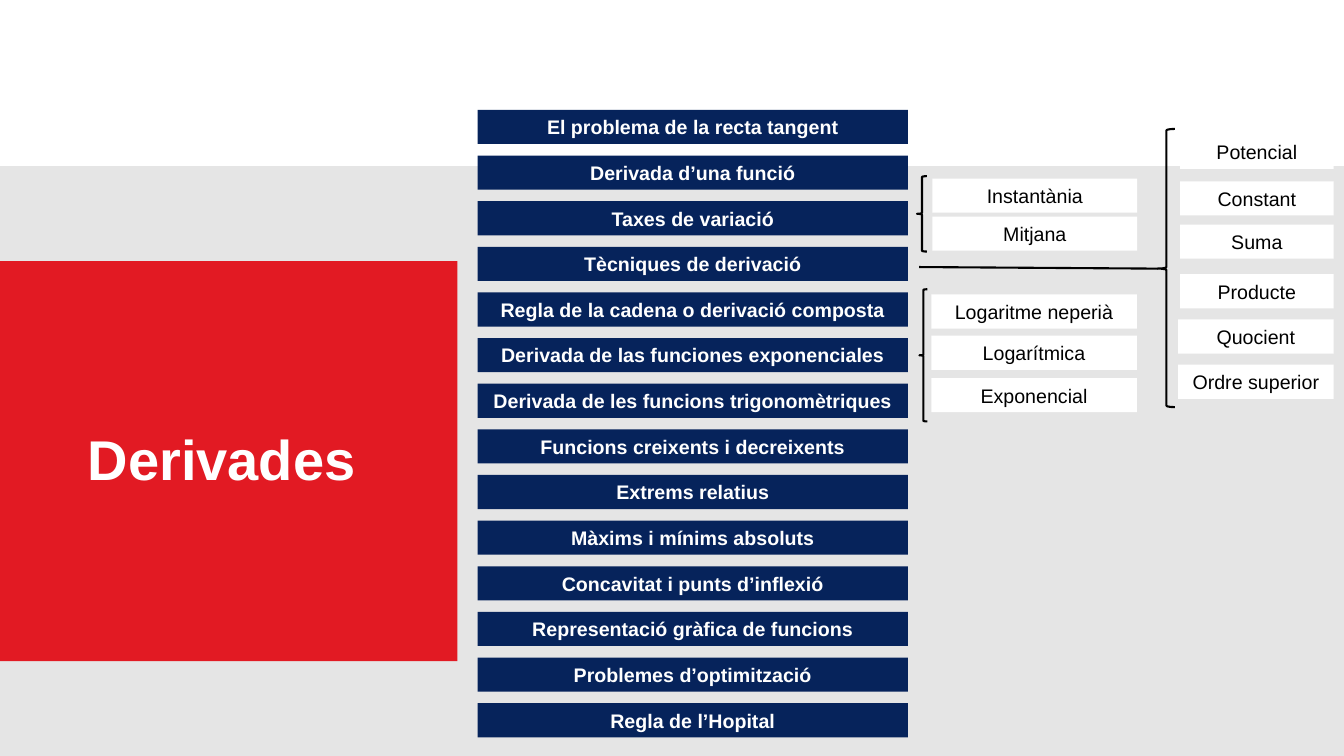
from pptx import Presentation
from pptx.dml.color import RGBColor
from pptx.enum.shapes import MSO_CONNECTOR, MSO_SHAPE
from pptx.enum.text import MSO_ANCHOR, MSO_AUTO_SIZE, PP_ALIGN
from pptx.oxml.ns import qn
from pptx.util import Cm, Pt
from lxml import etree

RECTANGLE = MSO_SHAPE.RECTANGLE
LEFT_BRACE = MSO_SHAPE.LEFT_BRACE
STRAIGHT = MSO_CONNECTOR.STRAIGHT
MIDDLE = MSO_ANCHOR.MIDDLE
GROW = MSO_AUTO_SIZE.SHAPE_TO_FIT_TEXT
LEFT, CENTER = PP_ALIGN.LEFT, PP_ALIGN.CENTER

COLORS = {
    "grey": "E5E5E5",
    "red": "E21A23",
    "navy": "06235B",
    "white": "FFFFFF",
    "black": "000000",
}
FONT = "Arial"
WIDTH, HEIGHT = 33.87, 19.05
BAR_HEIGHT = 0.86

TOPICS = [
    "El problema de la recta tangent",
    "Derivada d’una funció",
    "Taxes de variació",
    "Tècniques de derivació",
    "Regla de la cadena o derivació composta",
    "Derivada de las funciones exponenciales",
    "Derivada de les funcions trigonomètriques",
    "Funcions creixents i decreixents",
    "Extrems relatius",
    "Màxims i mínims absoluts",
    "Concavitat i punts d’inflexió",
    "Representació gràfica de funcions",
    "Problemes d’optimització",
    "Regla de l’Hopital",
]
# Subtopics with their tops in cm
RATES = [("Instantània", 4.5), ("Mitjana", 5.46)]
EXPONENTIALS = [("Logaritme neperià", 7.42), ("Logarítmica", 8.46), ("Exponencial", 9.53)]
BASIC_RULES = [("Potencial", 3.4), ("Constant", 4.57), ("Suma", 5.66), ("Producte", 6.91)]
FURTHER_RULES = [("Quocient", 8.05), ("Ordre superior", 9.19)]


def color(name):
    return RGBColor.from_string(COLORS[name])


def write(shape, text, size=14, ink="black", bold=False, align=CENTER):
    frame = shape.text_frame
    frame.word_wrap = True
    frame.auto_size = GROW
    frame.vertical_anchor = MIDDLE
    para = frame.paragraphs[0]
    para.alignment = align
    span = para.add_run()
    span.text = text
    span.font.name = FONT
    span.font.size = Pt(size)
    span.font.bold = bold
    span.font.color.rgb = color(ink)


def add_block(page, box, fill):
    block = page.shapes.add_shape(RECTANGLE, *map(Cm, box))
    block.shadow.inherit = False
    block.fill.solid()
    block.fill.fore_color.rgb = color(fill)
    block.line.fill.background()
    return block


def add_brace(page, box, middle=0.5):
    brace = page.shapes.add_shape(LEFT_BRACE, *map(Cm, box))
    brace.shadow.inherit = False
    brace.fill.background()
    brace.line.color.rgb = color("black")
    brace.line.width = Pt(1.5)
    brace.adjustments[0] = 0.083
    brace.adjustments[1] = middle


def add_stem(page, start, end):
    stem = page.shapes.add_connector(STRAIGHT, *map(Cm, start + end))
    stem.line.color.rgb = color("black")
    stem.line.width = Pt(1.5)
    etree.SubElement(stem.element.spPr, qn("a:effectLst"))


def add_title_panel(page, box):
    left, top, width, height = box
    add_block(page, box, "red")
    title = page.shapes.title
    title.left, title.top = Cm(left + 1.96), Cm(top + 3.99)
    title.width, title.height = Cm(8.15), Cm(1.96)
    write(title, "Derivades", size=40, ink="white", bold=True, align=LEFT)
    # Bring the title in front of the panel
    title.element.getparent().append(title.element)


def add_topics(page, left, top, width, step):
    for row, topic in enumerate(TOPICS):
        bar = add_block(page, (left, top + row * step, width, BAR_HEIGHT), "navy")
        write(bar, topic, ink="white", bold=True)


def add_subtopics(page, left, width, items):
    for text, top in items:
        write(add_block(page, (left, top, width, BAR_HEIGHT), "white"), text)


def add_technique_brace(page, box):
    left, top, width, height = box
    middle = 0.502
    add_brace(page, box, middle)
    joint = top + middle * height
    add_stem(page, (left - 6.02, joint - 0.04), (left, joint))


def build_page(deck):
    page = deck.slides.add_slide(deck.slide_layouts[5])
    # Background and title
    add_block(page, (0, 4.19, WIDTH, HEIGHT - 4.19), "grey")
    add_title_panel(page, (0, 6.58, 11.53, 10.08))
    # Main topics
    add_topics(page, 12.04, 2.77, 10.84, 1.15)
    # Subtopics
    add_subtopics(page, 23.5, 5.16, RATES)
    add_subtopics(page, 23.47, 5.18, EXPONENTIALS)
    add_subtopics(page, 29.74, 3.87, BASIC_RULES)
    add_subtopics(page, 29.69, 3.92, FURTHER_RULES)
    # Braces
    add_brace(page, (23.11, 4.44, 0.25, 1.9))
    add_brace(page, (23.17, 7.29, 0.2, 3.33))
    add_technique_brace(page, (29.18, 3.25, 0.43, 7.01))


def main():
    deck = Presentation()
    deck.slide_width, deck.slide_height = Cm(WIDTH), Cm(HEIGHT)
    build_page(deck)
    deck.save("out.pptx")


if __name__ == "__main__":
    main()
